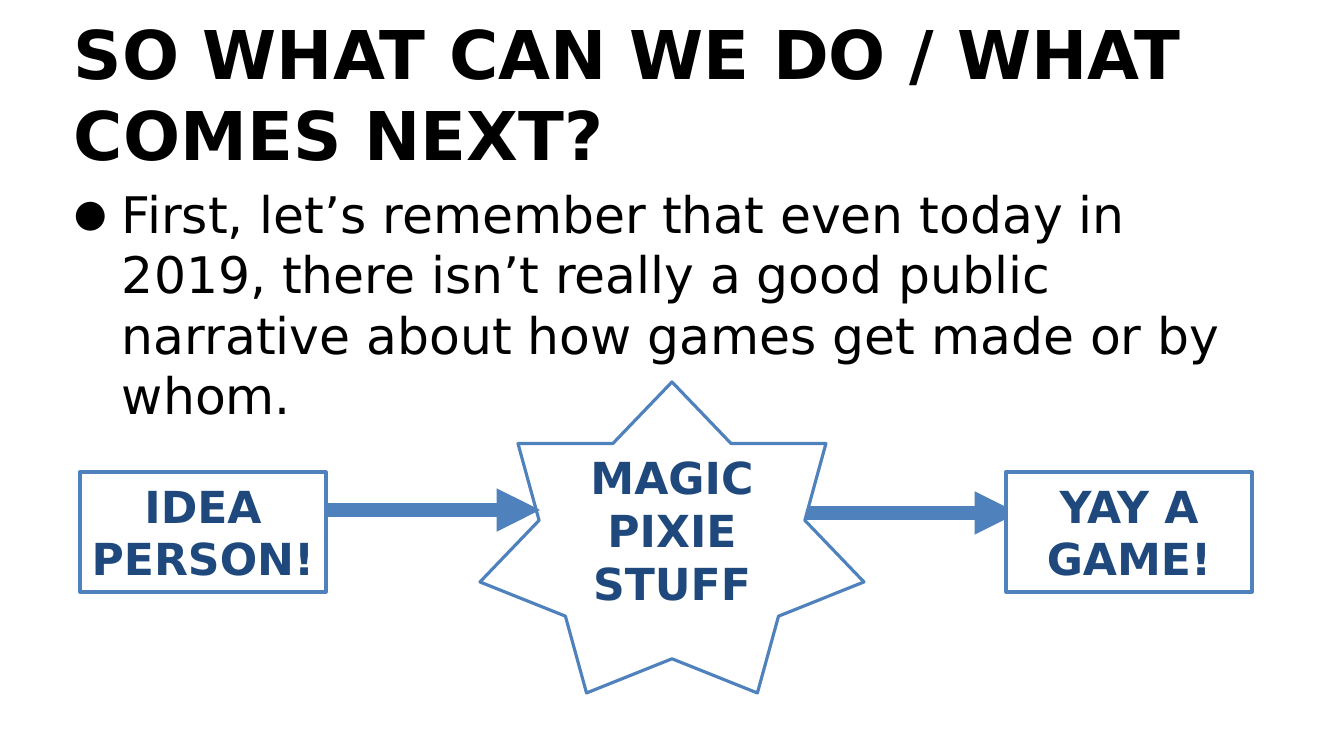
from lxml import etree
from pptx import Presentation
from pptx.dml.color import RGBColor
from pptx.enum.shapes import MSO_CONNECTOR, MSO_SHAPE
from pptx.enum.text import MSO_ANCHOR, PP_ALIGN
from pptx.oxml.ns import qn
from pptx.util import Emu, Pt

PX = 12096
FONT = "DejaVu Sans"
COLORS = {"paper": "FFFFFF", "ink": "000000", "accent": "4F81BD", "label": "1F497D"}
STRAIGHT = MSO_CONNECTOR.STRAIGHT
RECTANGLE, STAR = MSO_SHAPE.RECTANGLE, MSO_SHAPE.STAR_7_POINT
TOP, MIDDLE = MSO_ANCHOR.TOP, MSO_ANCHOR.MIDDLE
LEFT, CENTER = PP_ALIGN.LEFT, PP_ALIGN.CENTER


def px(length):
    """Turn a length in px into EMU."""
    return Emu(length * PX)


def color(name):
    """Look up a named colour."""
    return RGBColor.from_string(COLORS[name])


def write(frame, words, size, ink, bold=False, align=LEFT, anchor=TOP):
    """Fill a text frame with one paragraph and return the paragraph."""
    frame.word_wrap = True
    frame.vertical_anchor = anchor
    frame.margin_left = frame.margin_right = px(7)
    frame.margin_top = frame.margin_bottom = px(7)
    paragraph = frame.paragraphs[0]
    paragraph.alignment = align
    run = paragraph.add_run()
    run.text = words
    run.font.name = FONT
    run.font.size = Pt(size)
    run.font.bold = bold
    run.font.color.rgb = color(ink)
    return paragraph


def add_bullet(paragraph, indent):
    """Give a paragraph a round bullet with a hanging indent."""
    properties = paragraph._p.get_or_add_pPr()
    properties.set("marL", str(px(indent)))
    properties.set("indent", str(-px(indent)))
    bullet_color = etree.SubElement(properties, qn("a:buClr"))
    etree.SubElement(bullet_color, qn("a:srgbClr"), val=COLORS["ink"])
    etree.SubElement(properties, qn("a:buSzPct"), val="75000")
    etree.SubElement(properties, qn("a:buFont"), typeface=FONT)
    etree.SubElement(properties, qn("a:buChar"), char="●")


def add_heading(slide, left, top, width, height):
    """Place the heading in its box."""
    heading = slide.shapes.add_textbox(px(left), px(top), px(width), px(height))
    write(heading.text_frame, "SO WHAT CAN WE DO / WHAT COMES NEXT?", 64, "ink",
          bold=True, anchor=MIDDLE)


def add_reminder(slide, left, top, width, height):
    """Place the bulleted reminder in its box."""
    reminder = slide.shapes.add_textbox(px(left), px(top), px(width), px(height))
    point = write(
        reminder.text_frame,
        "First, let’s remember that even today in 2019, there isn’t really "
        "a good public narrative about how games get made or by whom.",
        48, "ink")
    add_bullet(point, 48)


def add_stage(slide, outline, words, left, top, width, height):
    """Place one outlined stage of the process."""
    stage = slide.shapes.add_shape(outline, px(left), px(top), px(width), px(height))
    stage.shadow.inherit = False
    stage.fill.solid()
    stage.fill.fore_color.rgb = color("paper")
    stage.line.color.rgb = color("accent")
    stage.line.width = Pt(3)
    write(stage.text_frame, words, 42, "label", bold=True, align=CENTER)


def add_arrow(slide, left, top, length):
    """Place a thick arrow pointing right."""
    arrow = slide.shapes.add_connector(
        STRAIGHT, px(left), px(top), px(left + length), px(top))
    arrow.line.color.rgb = color("accent")
    arrow.line.width = Pt(13.75)
    etree.SubElement(arrow.line._get_or_add_ln(), qn("a:tailEnd"), type="triangle")
    etree.SubElement(arrow._element.spPr, qn("a:effectLst"))


def add_process(slide, left, top, width, height):
    """Place the path from idea to game, with the end arrowhead tucked under its box."""
    box_width, box_height, box_top = 246, 120, top + 90
    star_width, arrow_length = 384, 214
    add_arrow(slide, left + 724, top + 131, arrow_length)
    add_stage(slide, RECTANGLE, "IDEA PERSON!", left, box_top, box_width, box_height)
    add_stage(slide, RECTANGLE, "YAY A GAME!", left + width - box_width, box_top,
              box_width, box_height)
    add_stage(slide, STAR, "MAGIC PIXIE STUFF", left + 400, top, star_width, height)
    add_arrow(slide, left + box_width, top + 128, arrow_length)


def main():
    """Build and save the slide."""
    deck = Presentation()
    deck.slide_width, deck.slide_height = px(1344), px(756)
    slide = deck.slides.add_slide(deck.slide_layouts[6])
    add_heading(slide, 67, 10, 1210, 166)
    add_reminder(slide, 67, 176, 1210, 460)
    add_process(slide, 80, 382, 1172, 311)
    deck.save("out.pptx")


if __name__ == "__main__":
    main()
